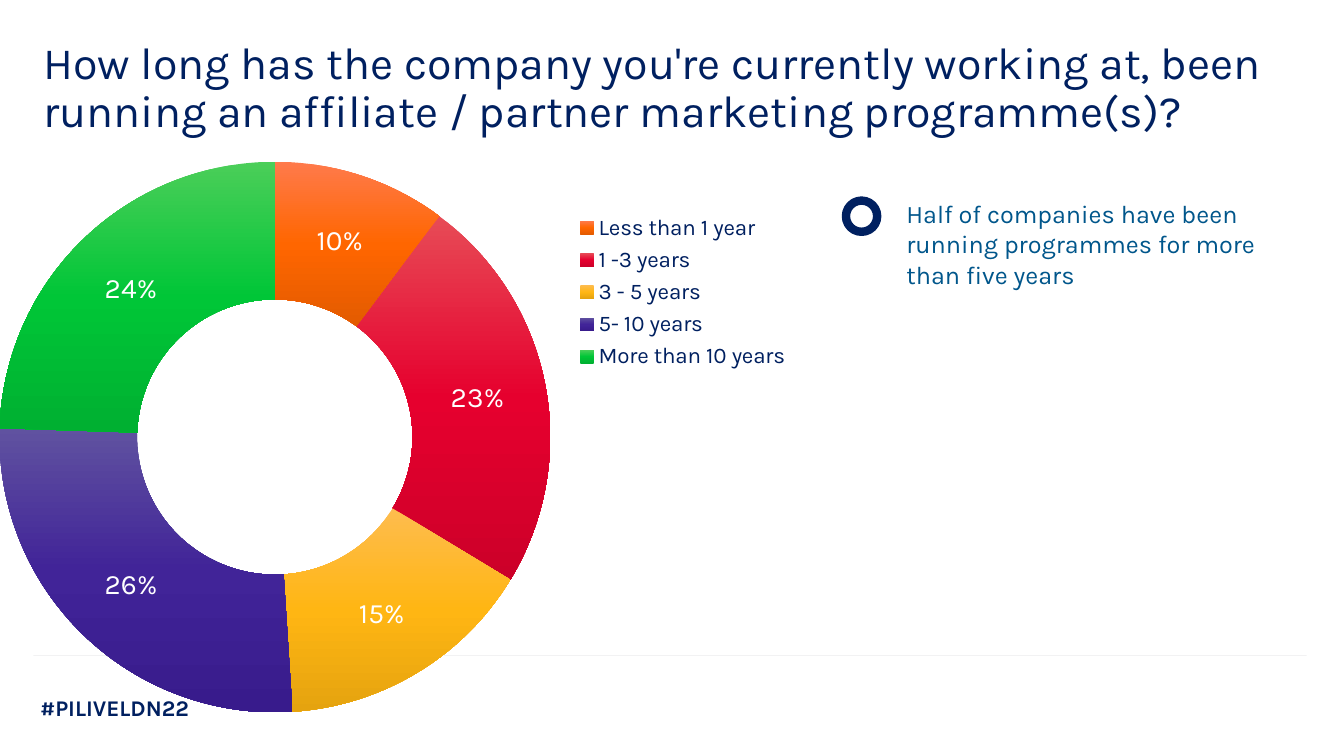
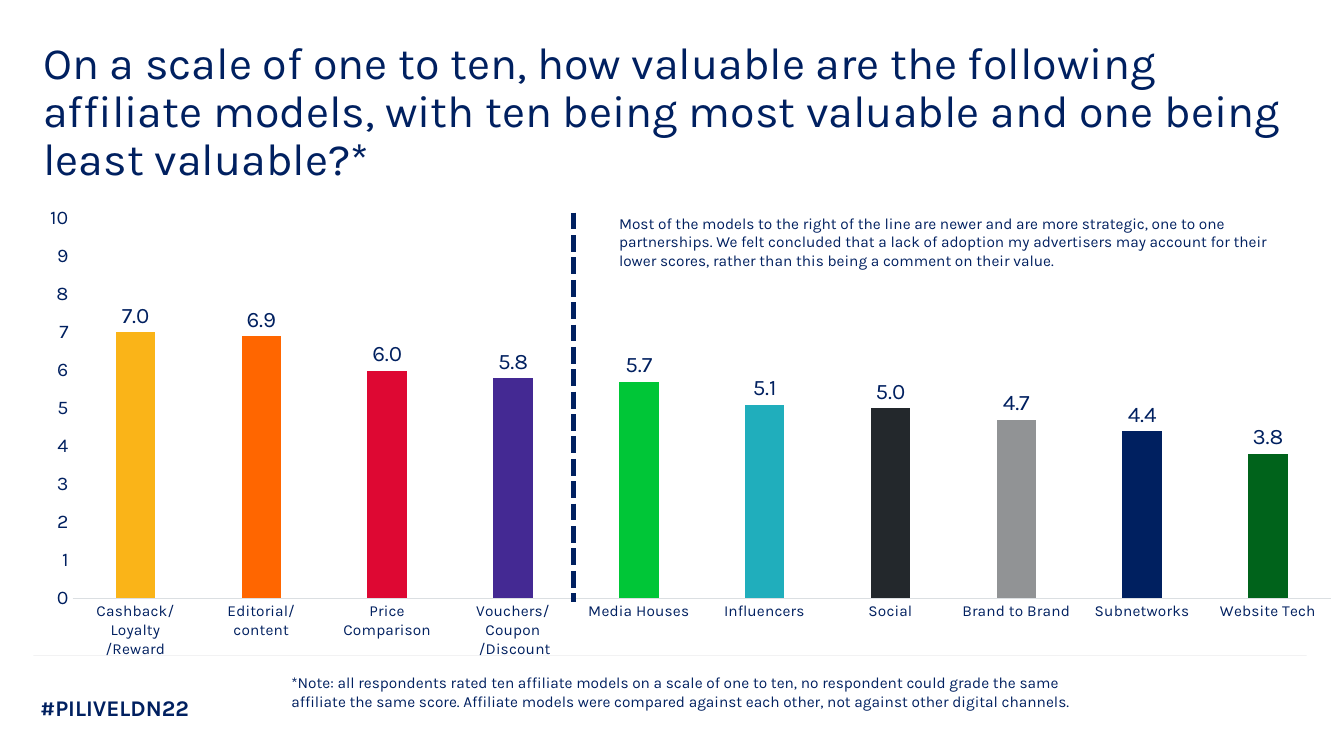
import pptx
import pptx.chart.data
import pptx.dml.color
import pptx.enum.chart
import pptx.enum.dml
import pptx.enum.shapes
import pptx.enum.text
import pptx.oxml.ns
import pptx.util
import lxml.etree

Inches, Pt = pptx.util.Inches, pptx.util.Pt
rgb = pptx.dml.color.RGBColor.from_string
qn = pptx.oxml.ns.qn
XL = pptx.enum.chart

# Shared style
FONT = "Karla"
NAVY, TEAL, WHITE = "002060", "00568B", "FFFFFF"
RULE, AXIS = "D3D4D6", "DBDFE2"
HASHTAG = "#PILIVELDN22"


def add_text(s, box, text, size, color=NAVY, bold=False, inset=(0.08, 0)):
    tf = s.shapes.add_textbox(*[Inches(v) for v in box]).text_frame
    tf.word_wrap = True
    tf.margin_left = tf.margin_right = Inches(inset[0])
    tf.margin_top = tf.margin_bottom = Inches(inset[1])
    r = tf.paragraphs[0].add_run()
    r.text = text
    r.font.name, r.font.size, r.font.bold = FONT, Pt(size), bold
    r.font.color.rgb = rgb(color)


def add_line(s, x1, y1, x2, y2, color, width):
    line = s.shapes.add_connector(
        pptx.enum.shapes.MSO_CONNECTOR.STRAIGHT,
        Inches(x1), Inches(y1), Inches(x2), Inches(y2))
    line.line.color.rgb = rgb(color)
    line.line.width = Pt(width)
    return line


prs = pptx.Presentation()
prs.slide_width, prs.slide_height = Inches(13.33), Inches(7.5)

# Titles, rules and hashtags
titles = [
    ("How long has the company you're currently working at, been running "
     "an affiliate / partner marketing programme(s)?", 12.47),
    ("On a scale of one to ten, how valuable are the following affiliate "
     "models, with ten being most valuable and one being least valuable?*", 12.68),
]
lines = []
for text, width in titles:
    s = prs.slides.add_slide(prs.slide_layouts[5])
    title = s.shapes.title
    title.left, title.top = Inches(0.33), Inches(0.35)
    title.width, title.height = Inches(width), Inches(0.57)
    tf = title.text_frame
    tf.word_wrap = True
    tf.auto_size = pptx.enum.text.MSO_AUTO_SIZE.NONE
    tf.vertical_anchor = pptx.enum.text.MSO_ANCHOR.TOP
    p = tf.paragraphs[0]
    p.alignment = pptx.enum.text.PP_ALIGN.LEFT
    p.line_spacing = 0.9
    r = p.add_run()
    r.text = text
    r.font.name, r.font.size = FONT, Pt(32)
    r.font.color.rgb = rgb(NAVY)

    rule = add_line(s, 0.33, 6.5, 12.96, 6.5, RULE, 0.25)
    for clr in rule.element.spPr.iter(qn("a:srgbClr")):
        lxml.etree.SubElement(clr, qn("a:alpha"), val="80000")
    lines.append(rule)
    add_text(s, (0.3, 6.84, 3.58, 0.37), HASHTAG, 16, bold=True, inset=(0.1, 0.05))

tenure, models = prs.slides

# Slide 1: doughnut of programme age
ages = [
    ("Less than 1 year", 0.10, ("FF7A4B", "FF6600", "E35B00")),
    ("1 -3 years", 0.23, ("E74B56", "E6002E", "CC0029")),
    ("3 - 5 years", 0.15, ("FEBC4E", "FFB613", "E5A30F")),
    ("5- 10 years", 0.26, ("6052A0", "412498", "381B8C")),
    ("More than 10 years", 0.24, ("4BCE59", "00C637", "00B031")),
]
data = pptx.chart.data.CategoryChartData(number_format="0%")
data.categories = [name for name, share, shades in ages]
data.add_series("Series 1", [share for name, share, shades in ages])
ring = tenure.shapes.add_chart(
    XL.XL_CHART_TYPE.DOUGHNUT, Inches(-1.12), Inches(1.49),
    Inches(9.99), Inches(5.75), data).chart
ring.has_legend = True
ring.legend.position = XL.XL_LEGEND_POSITION.RIGHT
ring.legend.include_in_layout = False
for i in range(len(ages)):
    fill = ring.plots[0].series[0].points[i].format.fill
    fill.gradient()
    fill.gradient_angle = 270
for stops, (name, share, shades) in zip(ring.element.iter(qn("a:gsLst")), ages):
    for gs in list(stops):
        stops.remove(gs)
    for i, shade in enumerate(shades):
        gs = lxml.etree.SubElement(stops, qn("a:gs"), pos=str(i * 50000))
        lxml.etree.SubElement(gs, qn("a:srgbClr"), val=shade)

# Slide 1: takeaway
add_text(tenure, (8.91, 1.97, 3.94, 0.87),
         "Half of companies have been running programmes for more than five years",
         18, TEAL)
sp = tenure.shapes.add_shape(pptx.enum.shapes.MSO_SHAPE.OVAL, Inches(8.39),
                             Inches(1.99), Inches(0.31), Inches(0.31))
sp.shadow.inherit = False
sp.fill.solid()
sp.fill.fore_color.rgb = rgb(WHITE)
sp.line.color.rgb = rgb(NAVY)
sp.line.width = Pt(6)

# Slide 2: columns of model scores
scores = [
    ("Cashback/Loyalty\n/Reward", 7.0, "FAB418"),
    ("Editorial/content", 6.9, "FF6600"),
    ("Price Comparison", 6.0, "DE0833"),
    ("Vouchers/Coupon\n /Discount", 5.8, "442993"),
    ("Media Houses", 5.7, "00C637"),
    ("Influencers", 5.1, "20AEBC"),
    ("Social", 5.0, "23282C"),
    ("Brand to Brand", 4.7, "919395"),
    ("Subnetworks", 4.4, "002060"),
    ("Website Tech", 3.8, "00631B"),
]
data = pptx.chart.data.CategoryChartData(number_format="0.0")
data.categories = [name for name, score, color in scores]
data.add_series("Series 1", [score for name, score, color in scores])
columns = models.shapes.add_chart(
    XL.XL_CHART_TYPE.COLUMN_CLUSTERED, Inches(0.33), Inches(1.99),
    Inches(13), Inches(4.54), data).chart
columns.has_legend = False
plot = columns.plots[0]
plot.gap_width, plot.overlap = 219, -27
for i, (name, score, color) in enumerate(scores):
    fill = plot.series[0].points[i].format.fill
    fill.solid()
    fill.fore_color.rgb = rgb(color)

cat_axis, val_axis = columns.category_axis, columns.value_axis
for axis in (cat_axis, val_axis):
    axis.has_major_gridlines = False
    axis.major_tick_mark = axis.minor_tick_mark = XL.XL_TICK_MARK.NONE
cat_axis.format.line.color.rgb = rgb(AXIS)
cat_axis.format.line.width = Pt(0.75)
val_axis.format.line.fill.background()
val_axis.minimum_scale, val_axis.maximum_scale, val_axis.major_unit = 0, 10, 1
val_axis.tick_labels.number_format = "0"
val_axis.tick_labels.number_format_is_linked = False

# Both charts: data labels and fonts
for chart, fmt in ((ring, "0%"), (columns, "0.0")):
    chart.has_title = False
    plot = chart.plots[0]
    plot.vary_by_categories = chart is ring
    plot.has_data_labels = True
    labels = plot.data_labels
    labels.show_value, labels.show_percentage = True, False
    labels.number_format, labels.number_format_is_linked = fmt, False
columns.plots[0].data_labels.position = XL.XL_LABEL_POSITION.OUTSIDE_END

for font, size, color in (
        (ring.font, 10, NAVY), (columns.font, 10, NAVY),
        (ring.legend.font, 16, NAVY),
        (ring.plots[0].data_labels.font, 20, WHITE),
        (columns.plots[0].data_labels.font, 16, NAVY),
        (cat_axis.tick_labels.font, 11, NAVY),
        (val_axis.tick_labels.font, 14, NAVY)):
    font.name, font.size = FONT, Pt(size)
    font.color.rgb = rgb(color)

# Fixed places of plots and legend, as fractions of the chart
for chart, tag, index, place in (
        (ring, "c:plotArea", 0, (0.11, 0.02, 0.55, 0.95)),
        (ring, "c:legend", 1, (0.68, 0.1, 0.22, 0.29)),
        (columns, "c:plotArea", 0, (0.03, 0.04, 0.96, 0.84))):
    parent = next(chart.element.iter(qn(tag)))
    for old in parent.findall(qn("c:layout")):
        parent.remove(old)
    layout = lxml.etree.Element(qn("c:layout"))
    parent.insert(index, layout)
    manual = lxml.etree.SubElement(layout, qn("c:manualLayout"))
    if tag == "c:plotArea":
        lxml.etree.SubElement(manual, qn("c:layoutTarget"), val="inner")
    for edge in ("xMode", "yMode"):
        lxml.etree.SubElement(manual, qn("c:" + edge), val="edge")
    for key, value in zip("xywh", place):
        lxml.etree.SubElement(manual, qn("c:" + key), val=str(value))

# Slide 2: divider and notes
divider = add_line(models, 5.69, 2.11, 5.69, 5.97, NAVY, 4)
divider.line.dash_style = pptx.enum.dml.MSO_LINE.SQUARE_DOT
lines.append(divider)
add_text(models, (2.81, 6.68, 8.36, 0.87),
         "*Note: all respondents rated ten affiliate models on a scale of one to "
         "ten, no respondent could grade the same affiliate the same score. "
         "Affiliate models were compared against each other, not against other "
         "digital channels.", 11)
add_text(models, (6.06, 2.12, 6.83, 0.87),
         "Most of the models to the right of the line are newer and are more "
         "strategic, one to one partnerships. We felt concluded that a lack of "
         "adoption my advertisers may account for their lower scores, rather than "
         "this being a comment on their value.", 11)

# Lines without shadow
for line in lines:
    lxml.etree.SubElement(line.element.spPr, qn("a:effectLst"))

prs.save("out.pptx")
